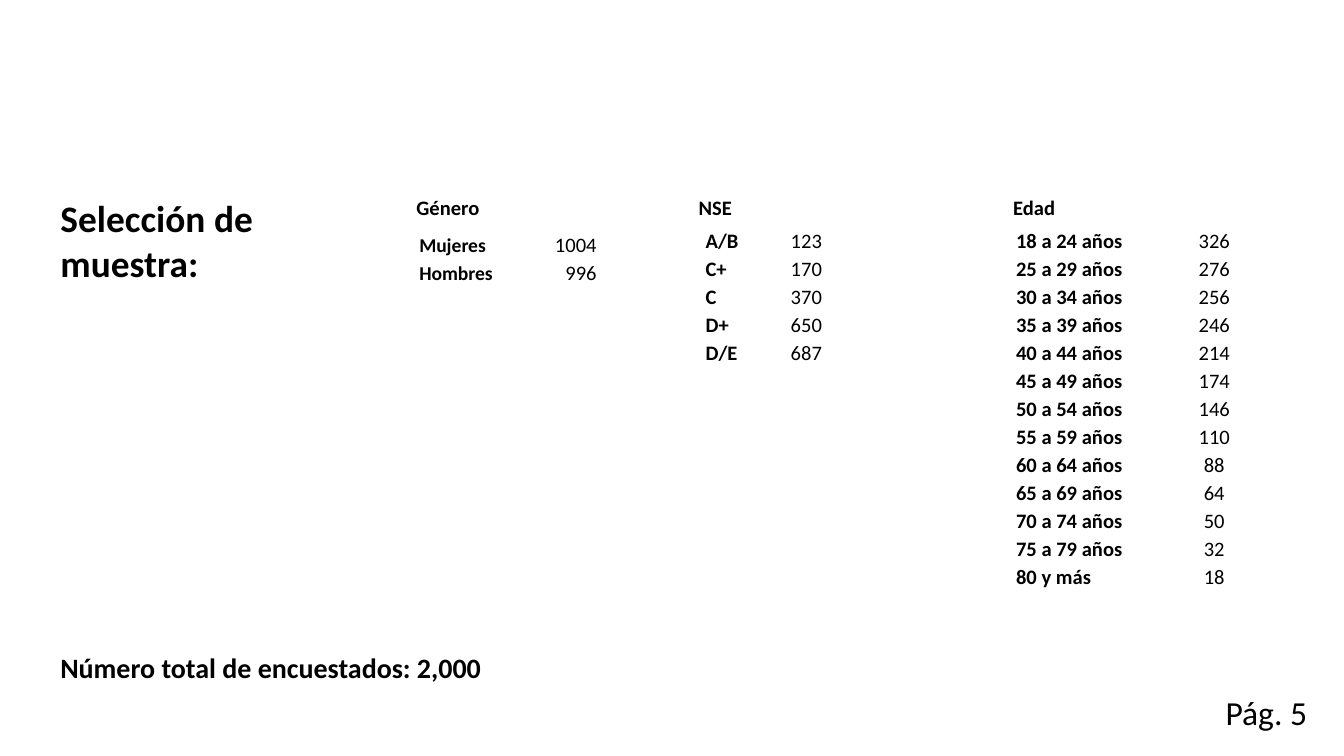
from pptx import Presentation
from pptx.dml.color import RGBColor
from pptx.enum.text import MSO_ANCHOR, MSO_AUTO_SIZE, PP_ALIGN
from pptx.util import Inches, Pt

LEFT, CENTER, RIGHT = PP_ALIGN.LEFT, PP_ALIGN.CENTER, PP_ALIGN.RIGHT
TOP, BOTTOM = MSO_ANCHOR.TOP, MSO_ANCHOR.BOTTOM
NO_FIT = MSO_AUTO_SIZE.NONE
TITLE_ONLY = 5

SLIDE_WIDTH = Inches(10)
SLIDE_HEIGHT = SLIDE_WIDTH * 9 // 16
FONT = "Calibri"
BLACK = "000000"
ROW_HEIGHT = Pt(15)
HEADING_TOP = 1.4

GENDER_ROWS = [("Mujeres", 1004), ("Hombres", 996)]
LEVEL_ROWS = [("A/B", 123), ("C+", 170), ("C", 370), ("D+", 650), ("D/E", 687)]
AGE_COUNTS = [326, 276, 256, 246, 214, 174, 146, 110, 88, 64, 50, 32]
AGE_STARTS = [18, *range(25, 80, 5)]
AGE_ENDS = range(24, 80, 5)
AGE_ROWS = [
    (f"{start} a {end} años", count)
    for start, end, count in zip(AGE_STARTS, AGE_ENDS, AGE_COUNTS)
] + [("80 y más", 18)]


def color(hex_value):
    return RGBColor.from_string(hex_value)


def apply(target, values):
    for name, value in values.items():
        setattr(target, name, value)


def write(text_frame, lines, size, bold=False, align=LEFT):
    """Put one formatted paragraph per line into a text frame."""
    for index, line in enumerate(lines):
        paragraph = text_frame.paragraphs[0] if index == 0 else text_frame.add_paragraph()
        paragraph.alignment = align
        run = paragraph.add_run()
        run.text = line
        apply(run.font, {"name": FONT, "size": Pt(size), "bold": bold})
        run.font.color.rgb = color(BLACK)


def set_title(slide, lines, left, top, width, height):
    title = slide.shapes.title
    apply(title, {"left": Inches(left), "top": Inches(top),
                  "width": Inches(width), "height": Inches(height)})
    apply(title.text_frame, {"vertical_anchor": TOP, "auto_size": NO_FIT, "word_wrap": True})
    write(title.text_frame, lines, 20, bold=True)


def add_text(slide, text, left, top, width, height, size, bold=True, wrap=False):
    box = slide.shapes.add_textbox(Inches(left), Inches(top), Inches(width), Inches(height))
    box.text_frame.word_wrap = wrap
    write(box.text_frame, [text], size, bold)


def add_count_table(slide, rows, left, top, widths, align=CENTER, label_size=11):
    """Add a plain table of bold labels and their counts."""
    frame = slide.shapes.add_table(
        len(rows), len(widths), Inches(left), Inches(top),
        Inches(sum(widths)), ROW_HEIGHT * len(rows))
    table = frame.table
    apply(table, {"first_row": False, "horz_banding": False})
    for column, width in zip(table.columns, widths):
        column.width = Inches(width)

    cell_format = {"vertical_anchor": BOTTOM, "margin_left": Inches(0.01),
                   "margin_right": Inches(0.01), "margin_top": Inches(0.01),
                   "margin_bottom": 0}
    for row, (label, count) in zip(table.rows, rows):
        row.height = ROW_HEIGHT
        label_cell, count_cell = row.cells
        for cell in (label_cell, count_cell):
            apply(cell, cell_format)
            cell.fill.background()
        write(label_cell.text_frame, [label], label_size, bold=True)
        write(count_cell.text_frame, [str(count)], 11, align=align)


def main():
    presentation = Presentation()
    apply(presentation, {"slide_width": SLIDE_WIDTH, "slide_height": SLIDE_HEIGHT})
    slide = presentation.slides.add_slide(presentation.slide_layouts[TITLE_ONLY])

    set_title(slide, ["Selección de", "muestra:"], 0.35, HEADING_TOP, 9.27, 1.41)

    # Group headings
    for heading, left, width in [("Género", 3, 0.76), ("NSE", 5.1, 0.54), ("Edad", 7.44, 0.6)]:
        add_text(slide, heading, left, HEADING_TOP, width, 0.29, 11)

    # Sample counts
    add_count_table(slide, GENDER_ROWS, 3.11, 1.71, [0.96, 0.38], RIGHT, label_size=10.5)
    add_count_table(slide, LEVEL_ROWS, 5.24, 1.68, [0.34, 0.84])
    add_count_table(slide, AGE_ROWS, 7.55, 1.68, [1.11, 0.75])

    # Total and page number
    add_text(slide, "Número total de encuestados: 2,000", 0.35, 4.79, 4.09, 0.8, 15, wrap=True)
    add_text(slide, "Pág. 5", 9.02, 5.1, 0.82, 0.4, 18, bold=False)

    presentation.save("out.pptx")


if __name__ == "__main__":
    main()
